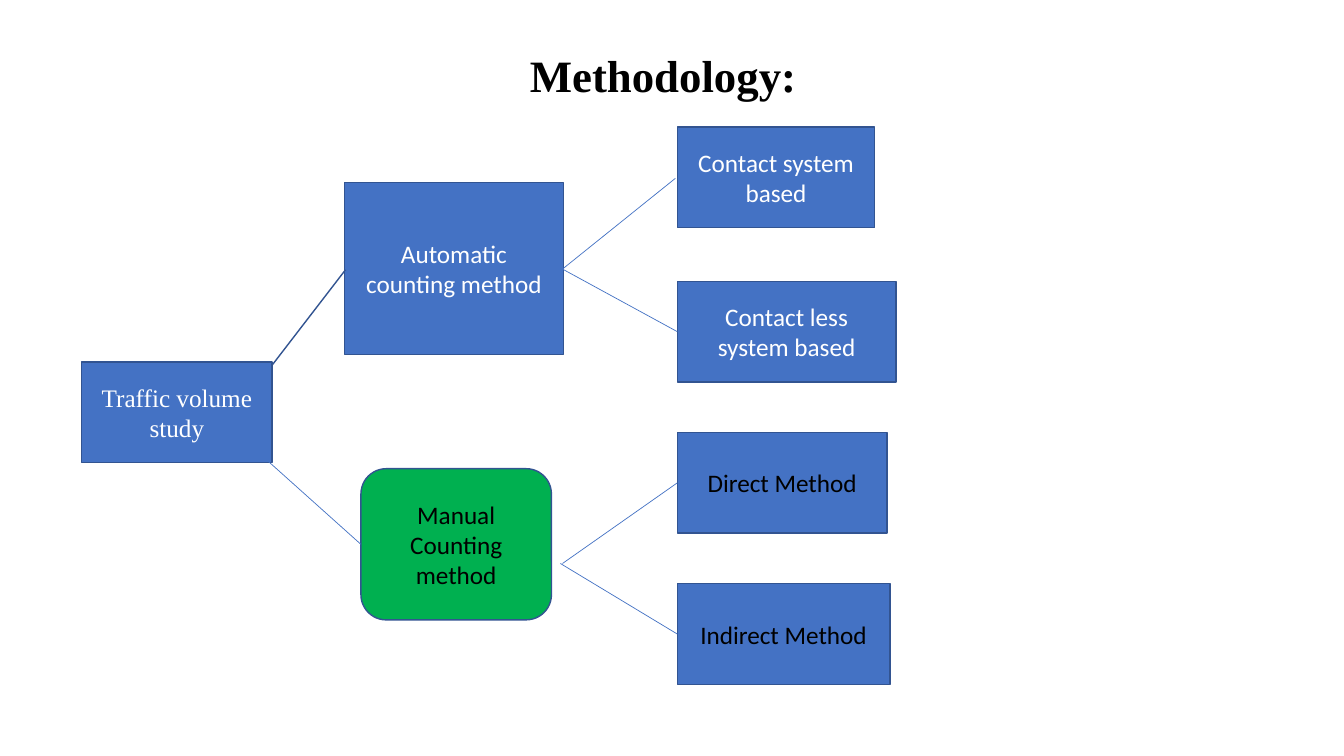
from dataclasses import dataclass

from lxml.etree import SubElement
from pptx import Presentation
from pptx.dml.color import RGBColor
from pptx.enum.shapes import MSO_CONNECTOR, MSO_SHAPE
from pptx.enum.text import MSO_ANCHOR, MSO_AUTO_SIZE, PP_ALIGN
from pptx.oxml.ns import qn
from pptx.util import Pt


@dataclass(frozen=True)
class Theme:
    blue: RGBColor = RGBColor(0x44, 0x72, 0xC4)
    green: RGBColor = RGBColor(0x00, 0xB0, 0x50)
    border: RGBColor = RGBColor(0x32, 0x54, 0x91)
    white: RGBColor = RGBColor(0xFF, 0xFF, 0xFF)
    black: RGBColor = RGBColor(0x00, 0x00, 0x00)
    sans: str = "Calibri"
    serif: str = "Times New Roman"
    title_size: int = 32
    body_size: int = 18


def set_all(target, formats):
    for name, value in formats.items():
        setattr(target, name, value)


class Diagram:
    def __init__(self, s, theme):
        self.s = s
        self.theme = theme

    def label(self, tf, text, color, font, size, bold=False):
        p = tf.paragraphs[0]
        p.alignment = PP_ALIGN.CENTER
        r = p.add_run()
        r.text = text
        set_all(r.font, {"name": font, "size": Pt(size), "bold": bold})
        r.font.color.rgb = color

    def title(self, text, *frame):
        tf = self.s.shapes.add_textbox(*map(Pt, frame)).text_frame
        set_all(tf, {"word_wrap": True, "auto_size": MSO_AUTO_SIZE.SHAPE_TO_FIT_TEXT})
        t = self.theme
        self.label(tf, text, t.black, t.serif, t.title_size, True)

    def box(self, text, *frame, kind=MSO_SHAPE.RECTANGLE, fill=None,
            color=None, font=None, adjustments=()):
        t = self.theme
        sp = self.s.shapes.add_shape(kind, *map(Pt, frame))
        for i, value in enumerate(adjustments):
            sp.adjustments[i] = value
        sp.shadow.inherit = False
        sp.fill.solid()
        sp.fill.fore_color.rgb = fill or t.blue
        sp.line.color.rgb = t.border
        sp.line.width = Pt(1)
        tf = sp.text_frame
        set_all(tf, {"word_wrap": True, "vertical_anchor": MSO_ANCHOR.MIDDLE})
        self.label(tf, text, color or t.white, font or t.sans, t.body_size)

    def line(self, *ends):
        c = self.s.shapes.add_connector(MSO_CONNECTOR.STRAIGHT, *map(Pt, ends))
        c.line.color.rgb = self.theme.blue
        c.line.width = Pt(0.5)
        SubElement(c._element.spPr, qn("a:effectLst"))


def main():
    prs = Presentation()
    set_all(prs, {"slide_width": Pt(960), "slide_height": Pt(540)})
    s = prs.slides.add_slide(prs.slide_layouts[6])
    t = Theme()
    d = Diagram(s, t)

    d.title("Methodology:", 80.6, 30.2, 786.2, 46)
    d.box("Traffic volume study", 58.3, 258.5, 136.1, 72, font=t.serif)
    d.box("Automatic counting method", 246.2, 130.3, 156.2, 123.1,
          kind=MSO_SHAPE.LINE_CALLOUT_1, adjustments=(0.507, 0.004, 1.059, -0.331))
    d.box("Manual Counting method", 257.8, 334.8, 136.1, 108,
          kind=MSO_SHAPE.ROUNDED_RECTANGLE, fill=t.green, color=t.black)

    leaf_x, leaf_height = 483.8, 72
    for text, top, width, color in (
        ("Contact system based", 90.7, 141.1, t.white),
        ("Contact less system based", 200.9, 156.2, t.white),
        ("Direct Method", 308.9, 149.8, t.black),
        ("Indirect Method", 416.9, 151.9, t.black),
    ):
        d.box(text, leaf_x, top, width, leaf_height, color=color)

    for ends in (
        (401.8, 192.2, 482.4, 127.4),
        (401.8, 192.2, leaf_x, 236.9),
        (401.8, 402.5, leaf_x, 344.9),
        (400.3, 402.5, leaf_x, 452.9),
        (187.9, 326.2, 257.8, 388.8),
    ):
        d.line(*ends)

    prs.save("out.pptx")


if __name__ == "__main__":
    main()
